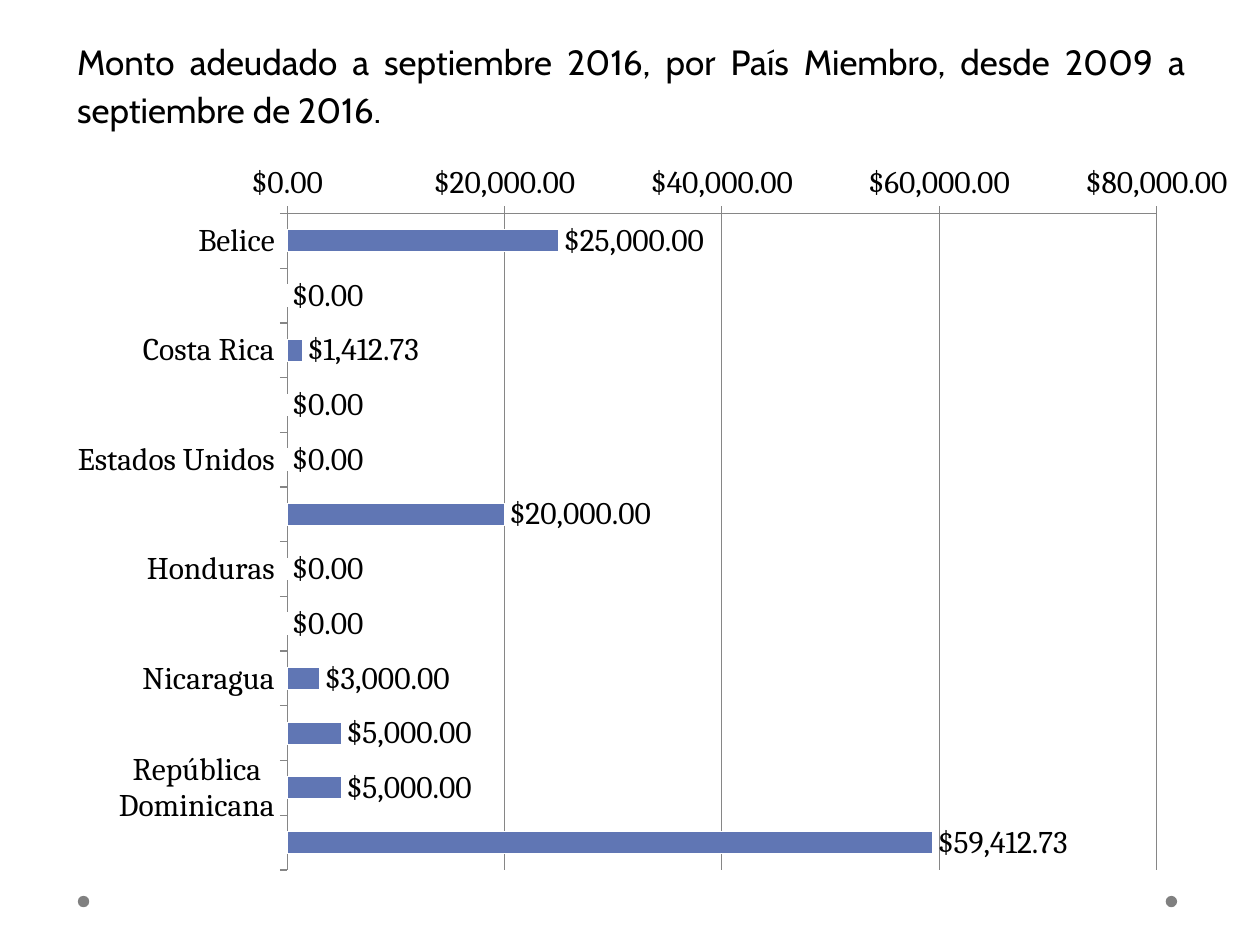
"""Build the slide with the amounts owed by each member country."""
from dataclasses import dataclass

from lxml import etree
from pptx import Presentation
from pptx import util as u
from pptx.chart.data import CategoryChartData
from pptx.dml.color import RGBColor
from pptx.enum import chart as charts, shapes, text
from pptx.oxml.ns import qn

HEADING = "Monto adeudado a septiembre 2016, por País Miembro, desde 2009 a septiembre de 2016."
DEBTS = {
    "Belice": 25000,
    "Canadá": 0,
    "Costa Rica": 1412.73,
    "El Salvador": 0,
    "Estados Unidos": 0,
    "Guatemala": 20000,
    "Honduras": 0,
    "México": 0,
    "Nicaragua": 3000,
    "Panamá": 5000,
    "República Dominicana": 5000,
    "TOTAL": 59412.73,
}
MONEY = "[$$-409]#,##0.00"
PLOT = {"x": 0.2, "y": 0.09, "w": 0.69, "h": 0.86}
DOT_LEFTS = (1.57, 23.5)


@dataclass(frozen=True)
class Theme:
    ink: RGBColor = RGBColor(0, 0, 0)
    bar: RGBColor = RGBColor(0x60, 0x76, 0xB4)
    edge: RGBColor = RGBColor(255, 255, 255)
    axis: RGBColor = RGBColor(0x86, 0x86, 0x86)
    dot: RGBColor = RGBColor(0x80, 0x80, 0x80)
    heading_font: str = "Cabin"
    chart_font: str = "Cambria"
    heading_size: u.Pt = u.Pt(20)
    chart_size: u.Pt = u.Pt(18)


THEME = Theme()


def style_font(font, name, size):
    font.name, font.size, font.color.rgb = name, size, THEME.ink


def add_dots(slide):
    for left in DOT_LEFTS:
        dot = slide.shapes.add_shape(
            shapes.MSO_SHAPE.OVAL, u.Cm(left), u.Cm(18.06), u.Cm(0.23), u.Cm(0.23))
        dot.shadow.inherit = False
        dot.fill.solid()
        dot.fill.fore_color.rgb = THEME.dot
        dot.line.fill.background()


def write_heading(body):
    body.left, body.top, body.width, body.height = map(u.Cm, (1.3, 0.56, 22.86, 12.57))
    frame = body.text_frame
    frame.text = HEADING
    frame.auto_size = text.MSO_AUTO_SIZE.NONE
    paragraph = frame.paragraphs[0]
    paragraph.alignment = text.PP_ALIGN.JUSTIFY
    paragraph.line_spacing = 1.15
    paragraph.space_before = u.Pt(4)
    style_font(paragraph.runs[0].font, THEME.heading_font, THEME.heading_size)
    properties = paragraph._p.get_or_add_pPr()
    properties.set("marL", "0")
    properties.set("indent", "0")
    etree.SubElement(properties, qn("a:buNone"))


def place_plot(chart):
    plot_area = chart._chartSpace.chart.plotArea
    for old in plot_area.findall(qn("c:layout")):
        plot_area.remove(old)
    layout = etree.Element(qn("c:layout"))
    manual = etree.SubElement(layout, qn("c:manualLayout"))
    settings = {"layoutTarget": "inner", "xMode": "edge", "yMode": "edge", **PLOT}
    for name, value in settings.items():
        etree.SubElement(manual, qn(f"c:{name}")).set("val", str(value))
    plot_area.insert(0, layout)


def add_debt_chart(slide):
    data = CategoryChartData(number_format=MONEY)
    data.categories = list(DEBTS)
    data.add_series("Series 1", list(DEBTS.values()))
    chart = slide.shapes.add_chart(
        charts.XL_CHART_TYPE.BAR_CLUSTERED,
        u.Cm(0.71), u.Cm(2.92), u.Cm(25.4), u.Cm(15.39), data).chart
    chart.has_title = chart.has_legend = False
    style_font(chart.font, THEME.chart_font, THEME.chart_size)
    place_plot(chart)

    category_axis, value_axis = chart.category_axis, chart.value_axis
    category_axis.reverse_order = True
    value_axis.has_major_gridlines = True
    value_axis.minimum_scale, value_axis.maximum_scale = 0, 80000
    value_axis.major_unit = 20000
    value_axis.tick_labels.number_format = MONEY
    value_axis.tick_labels.number_format_is_linked = False
    for axis in (category_axis, value_axis):
        axis.major_tick_mark = charts.XL_TICK_MARK.OUTSIDE
        axis.format.line.color.rgb = THEME.axis
    value_axis.major_gridlines.format.line.color.rgb = THEME.axis

    plot = chart.plots[0]
    plot.gap_width = 150
    plot.vary_by_categories = False
    series = plot.series[0]
    series.format.fill.solid()
    series.format.fill.fore_color.rgb = THEME.bar
    series.format.line.color.rgb = THEME.edge
    labels = series.data_labels
    labels.show_value = True
    labels.number_format = MONEY
    labels.number_format_is_linked = False
    labels.position = charts.XL_LABEL_POSITION.OUTSIDE_END
    style_font(labels.font, THEME.chart_font, THEME.chart_size)


def main():
    presentation = Presentation()
    presentation.slide_width, presentation.slide_height = u.Cm(25.4), u.Cm(19.05)
    slide = presentation.slides.add_slide(presentation.slide_layouts[1])
    title = slide.shapes.title._element
    title.getparent().remove(title)
    write_heading(slide.placeholders[1])
    add_dots(slide)
    add_debt_chart(slide)
    presentation.save("out.pptx")


if __name__ == "__main__":
    main()
